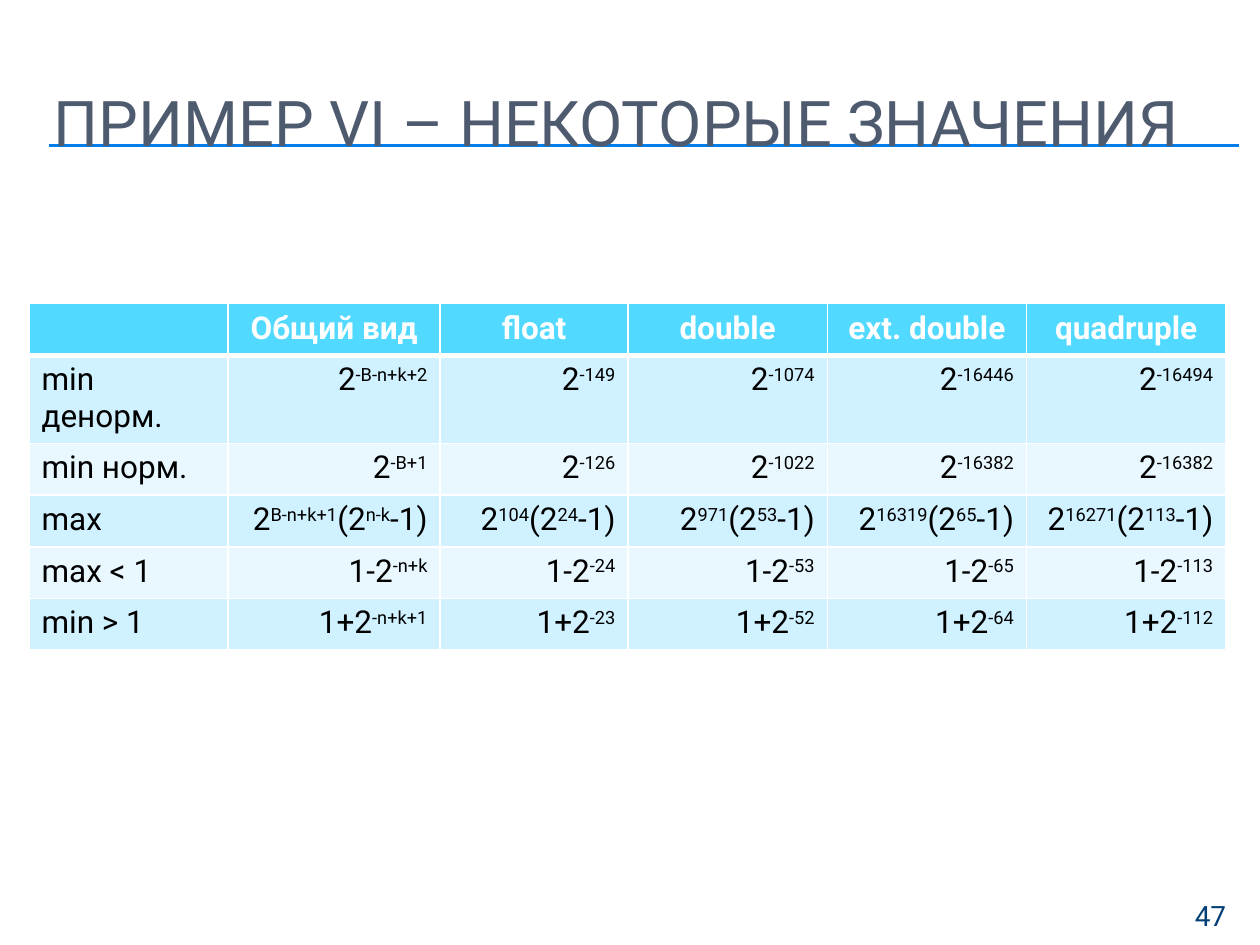
from dataclasses import dataclass
from lxml.etree import SubElement
from pptx import Presentation
from pptx.dml.color import RGBColor
from pptx.enum.shapes import MSO_CONNECTOR
from pptx.enum.text import MSO_ANCHOR, PP_ALIGN
from pptx.oxml import parse_xml
from pptx.oxml.ns import nsdecls, qn
from pptx.util import Inches, Pt


@dataclass(frozen=True)
class Theme:
    font: str = "Roboto"
    title: str = "4E5B6F"
    cyan: str = "51D9FF"
    blue: str = "007EEB"
    number: str = "003F75"
    ink: str = "000000"
    white: str = "FFFFFF"
    bands: tuple = ("D0F1FF", "E9F8FF")
    title_size: int = 36
    table_size: int = 18
    number_size: int = 16
    rule_width: float = 0.75
    grid_width: int = 1
    header_width: int = 3


THEME = Theme()
WIDTH, HEIGHT = 10, 7.5
TITLE_BOX = (0.33, 0.5, 9.5, 0.92)
TABLE_BOX = (0.23, 2.41, 9.5, 2.46)
NUMBER_BOX = (9, 7.08, 0.83, 0.27)
COLUMN_SHARES = (1.58, 1.68, 1.49, 1.58, 1.58, 1.58)
HEADER = ("", "Общий вид", "float", "double", "ext. double", "quadruple")
LABELS = ("min денорм.", "min норм.", "max", "max < 1", "min > 1")
FORMULAS = ("2^{}", "2^{}", "2^{}^(2^{}^-1)", "1-2^{}", "1+2^{}")
EXPONENTS = (
    ("-B-n+k+2", "-149", "-1074", "-16446", "-16494"),
    ("-B+1", "-126", "-1022", "-16382", "-16382"),
    ("B-n+k+1 n-k", "104 24", "971 53", "16319 65", "16271 113"),
    ("-n+k", "-24", "-53", "-65", "-113"),
    ("-n+k+1", "-23", "-52", "-64", "-112"),
)


def write(para, text, size, color, align=PP_ALIGN.LEFT, bold=False):
    para.alignment = align
    for index, part in enumerate(text.split("^")):
        if not part:
            continue
        span = para.add_run()
        span.text = part
        span.font.name = THEME.font
        span.font.size = Pt(size)
        span.font.bold = bold
        span.font.color.rgb = RGBColor.from_string(color)
        if index % 2:
            span._r.get_or_add_rPr().set("baseline", "30000")


def add_text(page, box, text, size, color, align, anchor):
    frame = page.shapes.add_textbox(*map(Inches, box)).text_frame
    frame.word_wrap = True
    frame.vertical_anchor = anchor
    write(frame.paragraphs[0], text, size, color, align)


def add_rule(page, left, right, top, color):
    rule = page.shapes.add_connector(
        MSO_CONNECTOR.STRAIGHT, *map(Inches, (left, top, right, top)))
    rule.line.color.rgb = RGBColor.from_string(color)
    rule.line.width = Pt(THEME.rule_width)
    SubElement(rule._element.spPr, qn("a:effectLst"))


def add_title(page, box):
    left, top, width, height = box
    rules = ((0.65, THEME.cyan), (0.65, THEME.blue), (0.66, THEME.blue))
    for offset, color in rules:
        add_rule(page, left + 0.06, left + width, top + offset, color)
    add_text(page, box, "ПРИМЕР VI – НЕКОТОРЫЕ ЗНАЧЕНИЯ",
             THEME.title_size, THEME.title, PP_ALIGN.LEFT, MSO_ANCHOR.MIDDLE)


def style_cell(cell, fill, top, bottom):
    cell.fill.solid()
    cell.fill.fore_color.rgb = RGBColor.from_string(fill)
    properties = cell._tc.get_or_add_tcPr()
    widths = {"L": THEME.grid_width, "R": THEME.grid_width, "T": top, "B": bottom}
    for index, (side, width) in enumerate(widths.items()):
        properties.insert(index, parse_xml(
            f'<a:ln{side} {nsdecls("a")} w="{Pt(width)}"><a:solidFill>'
            f'<a:srgbClr val="{THEME.white}"/></a:solidFill></a:ln{side}>'))


def add_values_table(page, box):
    body = [
        (label, *(formula.format(*powers.split()) for powers in row))
        for label, formula, row in zip(LABELS, FORMULAS, EXPONENTS)
    ]
    rows = [HEADER, *body]
    table = page.shapes.add_table(
        len(rows), len(HEADER), *map(Inches, box)).table
    for column, share in zip(table.columns, COLUMN_SHARES):
        column.width = Inches(box[2] * share / sum(COLUMN_SHARES))
    for row_index, row in enumerate(rows):
        table.rows[row_index].height = Inches(box[3] / len(rows))
        header = row_index == 0
        fill = THEME.cyan if header else THEME.bands[(row_index - 1) % 2]
        color = THEME.white if header else THEME.ink
        top = THEME.header_width if row_index == 1 else THEME.grid_width
        bottom = THEME.header_width if header else THEME.grid_width
        for column_index, text in enumerate(row):
            cell = table.cell(row_index, column_index)
            style_cell(cell, fill, top, bottom)
            if header:
                align = PP_ALIGN.CENTER
            else:
                align = PP_ALIGN.RIGHT if column_index else PP_ALIGN.LEFT
            write(cell.text_frame.paragraphs[0], text,
                  THEME.table_size, color, align, header)


def add_page_number(page, box):
    add_text(page, box, "47", THEME.number_size, THEME.number,
             PP_ALIGN.RIGHT, MSO_ANCHOR.TOP)


def main():
    deck = Presentation()
    deck.slide_width, deck.slide_height = Inches(WIDTH), Inches(HEIGHT)
    page = deck.slides.add_slide(deck.slide_layouts[6])
    add_title(page, TITLE_BOX)
    add_values_table(page, TABLE_BOX)
    add_page_number(page, NUMBER_BOX)
    deck.save("out.pptx")


if __name__ == "__main__":
    main()
